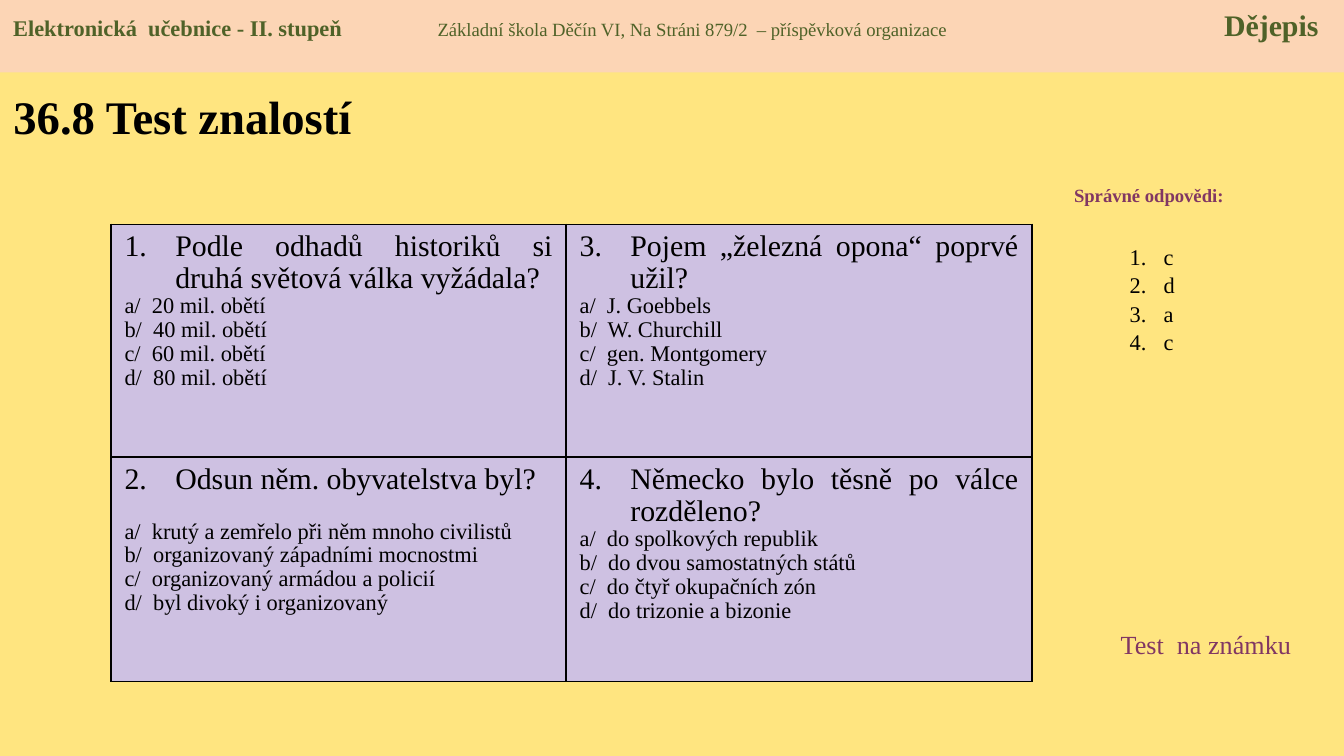
import pptx
import pptx.dml.color
import pptx.enum.shapes
import pptx.enum.text
import pptx.oxml.ns
import pptx.util
from lxml import etree

Cm = pptx.util.Cm
Pt = pptx.util.Pt
RGBColor = pptx.dml.color.RGBColor
Align = pptx.enum.text.PP_ALIGN

BLACK = RGBColor(0x00, 0x00, 0x00)
YELLOW = RGBColor(0xFF, 0xE5, 0x80)
PEACH = RGBColor(0xFC, 0xD5, 0xB5)
GREEN = RGBColor(0x4F, 0x62, 0x28)
PLUM = RGBColor(0x81, 0x37, 0x63)
LILAC = RGBColor(0xCE, 0xC1, 0xE2)

QUESTIONS = [
    [
        ("Podle odhadů historiků si druhá světová válka vyžádala?",
         ["20 mil. obětí", "40 mil. obětí", "60 mil. obětí", "80 mil. obětí"]),
        ("Odsun něm. obyvatelstva byl?",
         ["krutý a zemřelo při něm mnoho civilistů",
          "organizovaný západními mocnostmi",
          "organizovaný armádou a policií",
          "byl divoký i organizovaný"]),
    ],
    [
        ("Pojem „železná opona“ poprvé užil?",
         ["J. Goebbels", "W. Churchill", "gen. Montgomery", "J. V. Stalin"]),
        ("Německo bylo těsně po válce rozděleno?",
         ["do spolkových republik", "do dvou samostatných států",
          "do čtyř okupačních zón", "do trizonie a bizonie"]),
    ],
]


def sub(parent, tag, **attributes):
    """Append a DrawingML element and return it."""
    values = {name: str(value) for name, value in attributes.items()}
    return etree.SubElement(parent, pptx.oxml.ns.qn(tag), values)


class Lesson:
    font_name = "Times New Roman"

    def __init__(self, presentation):
        self.slide = presentation.slides.add_slide(presentation.slide_layouts[5])
        fill = self.slide.background.fill
        fill.solid()
        fill.fore_color.rgb = YELLOW

    def style(self, font, size, color=BLACK, bold=False):
        font.name = self.font_name
        font.size = Pt(size)
        font.color.rgb = color
        font.bold = bold

    def number(self, paragraph, indent, start=1):
        """Give the paragraph an automatic number with a hanging indent."""
        properties = paragraph._p.get_or_add_pPr()
        properties.set("marL", str(indent))
        properties.set("indent", str(-indent))
        sub(properties, "a:buFont", typeface=self.font_name)
        sub(properties, "a:buAutoNum", type="arabicPeriod", startAt=start)

    def title(self, text, left, top, width, height):
        title = self.slide.shapes.title
        title.left, title.top, title.width, title.height = left, top, width, height
        frame = title.text_frame
        frame.text = text
        frame.auto_size = pptx.enum.text.MSO_AUTO_SIZE.NONE
        frame.vertical_anchor = pptx.enum.text.MSO_ANCHOR.MIDDLE
        paragraph = frame.paragraphs[0]
        paragraph.alignment = Align.LEFT
        self.style(paragraph.font, 25, bold=True)

    def text(self, lines, left, top, width, height, size, color=BLACK,
             bold=False, align=Align.LEFT, numbered=False):
        frame = self.slide.shapes.add_textbox(left, top, width, height).text_frame
        frame.word_wrap = True
        frame.text = "\n".join(lines)
        for paragraph in frame.paragraphs:
            paragraph.alignment = align
            if numbered:
                paragraph.line_spacing = 1.05
                self.number(paragraph, Cm(0.64))
            self.style(paragraph.font, size, color, bold)

    def banner(self, parts, tabs, width, height):
        """Draw the top band; parts are (text, size, bold), parted by tab stops."""
        band = self.slide.shapes.add_shape(
            pptx.enum.shapes.MSO_SHAPE.RECTANGLE, 0, 0, width, height)
        band.shadow.inherit = False
        band.fill.solid()
        band.fill.fore_color.rgb = PEACH
        band.line.fill.background()
        band.text_frame.vertical_anchor = pptx.enum.text.MSO_ANCHOR.TOP
        paragraph = band.text_frame.paragraphs[0]
        paragraph.alignment = Align.LEFT
        tab_list = sub(paragraph._p.get_or_add_pPr(), "a:tabLst")
        for position, side in tabs:
            sub(tab_list, "a:tab", pos=position, algn=side)
        for index, (text, size, bold) in enumerate(parts):
            run = paragraph.add_run()
            run.text = "\t" + text if index else text
            self.style(run.font, size, GREEN, bold)

    def cell(self, cell, number, question, options, gap):
        """Fill a cell with a question and its options, gap points apart."""
        properties = cell._tc.get_or_add_tcPr()
        for side in ("a:lnL", "a:lnR", "a:lnT", "a:lnB"):
            border = sub(properties, side, w=Pt(1))
            sub(sub(border, "a:solidFill"), "a:srgbClr", val=BLACK)
        cell.fill.solid()
        cell.fill.fore_color.rgb = LILAC

        answers = [f"{letter}/  {option}" for letter, option in zip("abcd", options)]
        cell.text_frame.text = "\n".join([question, *answers])
        for index, paragraph in enumerate(cell.text_frame.paragraphs):
            paragraph.alignment = Align.JUSTIFY
            paragraph.line_spacing = 0.96
            if index == 0:
                self.number(paragraph, Cm(0.96), number)
            elif index == 1 and gap:
                paragraph.space_before = Pt(gap)
            self.style(paragraph.font, 12 if index else 16)

    def quiz(self, columns, left, top, widths, heights):
        """Draw the questions, numbered down each column in turn."""
        table = self.slide.shapes.add_table(
            len(heights), len(widths), left, top, sum(widths), sum(heights)).table
        table.first_row = table.horz_banding = False
        for row, height in zip(table.rows, heights):
            row.height = height
        for x, (questions, width) in enumerate(zip(columns, widths)):
            table.columns[x].width = width
            for y, (question, options) in enumerate(questions):
                number = x * len(heights) + y + 1
                gap = 13 if number == 2 else 0
                self.cell(table.cell(y, x), number, question, options, gap)


def main():
    presentation = pptx.Presentation()
    presentation.slide_width = Cm(25.4)
    presentation.slide_height = Cm(14.29)

    lesson = Lesson(presentation)
    lesson.title("36.8 Test znalostí", 0, Cm(1.37), Cm(8.1), Cm(1.65))
    lesson.text(["Správné odpovědi:"], Cm(19.71), Cm(3.35), Cm(4), Cm(0.69),
                10, PLUM, bold=True, align=Align.CENTER)
    lesson.quiz(QUESTIONS, Cm(2.1), Cm(4.24),
                [Cm(8.6), Cm(8.8)], [Cm(4.4), Cm(4.24)])
    lesson.text("cdac", Cm(21.1), Cm(4.45), Cm(1.4), Cm(2.8), 12, numbered=True)
    lesson.text(["Test  na známku"], Cm(20.93), Cm(11.76), Cm(4), Cm(0.86), 14, PLUM)
    lesson.banner(
        [("Elektronická  učebnice - II. stupeň", 12, True),
         ("Základní škola Děčín VI, Na Stráni 879/2  – příspěvková organizace", 10, False),
         ("Dějepis", 16, True)],
        [(Cm(8.02), "l"), (Cm(24.67), "r")], Cm(25.4), Cm(1.37))
    presentation.save("out.pptx")


if __name__ == "__main__":
    main()
